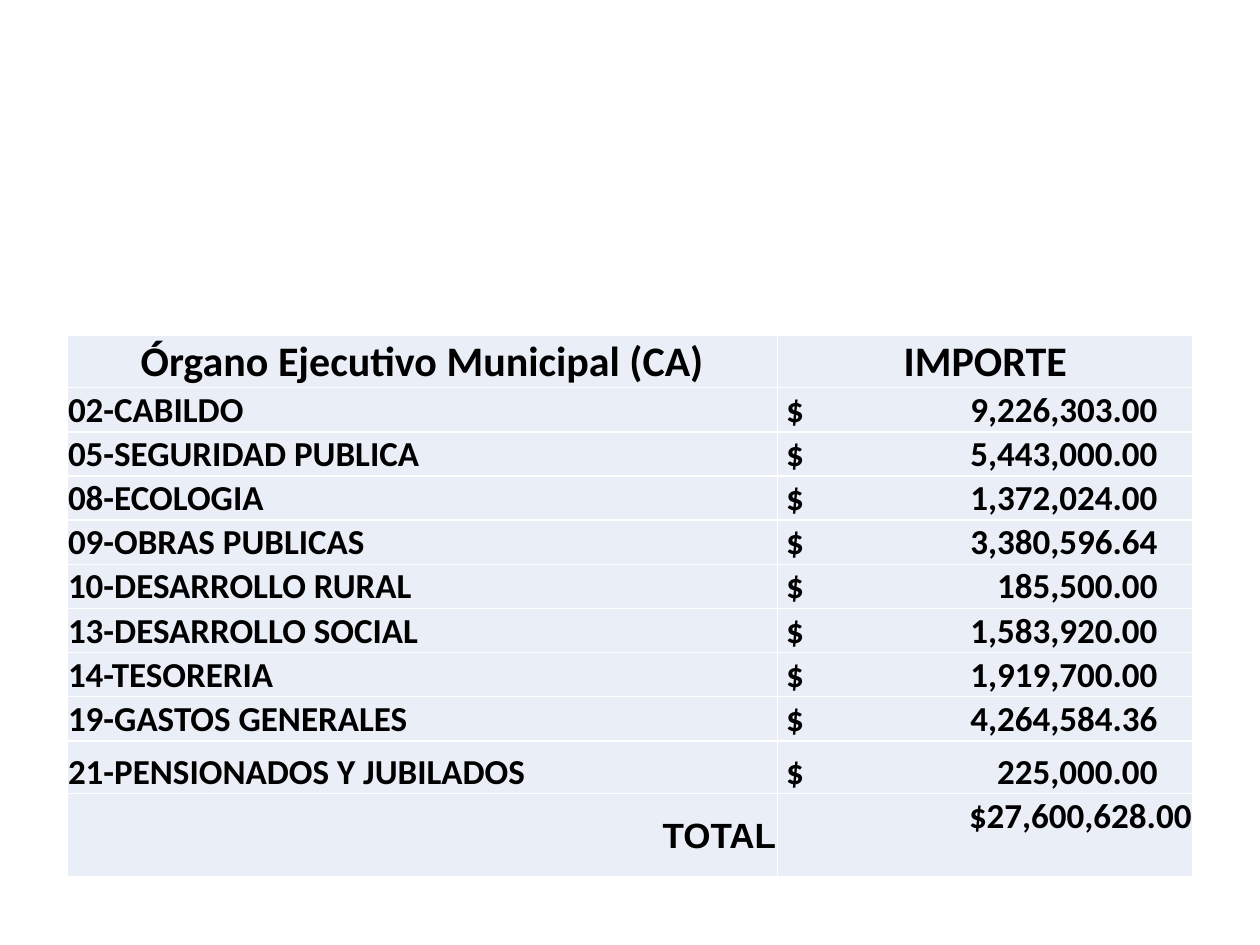
import pptx
import pptx.dml.color
import pptx.enum.text
import pptx.oxml.ns
import pptx.util
from lxml import etree
from pptx.util import Inches

BLACK = pptx.dml.color.RGBColor(0x00, 0x00, 0x00)
WHITE = pptx.dml.color.RGBColor(0xFF, 0xFF, 0xFF)
PALE_BLUE = pptx.dml.color.RGBColor(0xE9, 0xEE, 0xF7)

ALIGN = pptx.enum.text.PP_ALIGN
ANCHOR = pptx.enum.text.MSO_ANCHOR

HEADINGS = ("Órgano Ejecutivo Municipal (CA)", "IMPORTE")
BUDGET = [
    ("02-CABILDO", "9,226,303.00"),
    ("05-SEGURIDAD PUBLICA", "5,443,000.00"),
    ("08-ECOLOGIA", "1,372,024.00"),
    ("09-OBRAS PUBLICAS", "3,380,596.64"),
    ("10-DESARROLLO RURAL", "185,500.00"),
    ("13-DESARROLLO SOCIAL", "1,583,920.00"),
    ("14-TESORERIA", "1,919,700.00"),
    ("19-GASTOS GENERALES", "4,264,584.36"),
    ("21-PENSIONADOS Y JUBILADOS", "225,000.00"),
]
TOTAL = ("TOTAL", "$27,600,628.00")

COLUMN_WIDTHS = (5.64, 3.3)
ROW_HEIGHTS = [0.41] + [0.35] * 8 + [0.42, 0.66]
AMOUNT_INDENT = 0.07
AMOUNT_TAB = 2.95


def add_element(parent, tag, **attributes):
    element = etree.SubElement(parent, pptx.oxml.ns.qn(tag))
    for name, value in attributes.items():
        element.set(name, str(value))
    return element


def add_borders(cell):
    properties = cell._tc.get_or_add_tcPr()
    for side in ("a:lnL", "a:lnR", "a:lnT", "a:lnB"):
        line = add_element(properties, side, w=pptx.util.Pt(1))
        add_element(add_element(line, "a:solidFill"), "a:srgbClr", val=WHITE)


def add_right_tab(paragraph, position):
    tabs = add_element(paragraph._p.get_or_add_pPr(), "a:tabLst")
    add_element(tabs, "a:tab", pos=Inches(position), algn="r")


def fill_cell(cell, text, size=20, font="Calibri", align=ALIGN.LEFT,
              anchor=ANCHOR.BOTTOM, indent=0.01, tab=None):
    add_borders(cell)
    cell.fill.solid()
    cell.fill.fore_color.rgb = PALE_BLUE
    cell.margin_left = Inches(indent)
    cell.margin_right = cell.margin_top = Inches(0.01)
    cell.margin_bottom = 0
    cell.vertical_anchor = anchor
    cell.text = text
    paragraph = cell.text_frame.paragraphs[0]
    paragraph.alignment = align
    if tab is not None:
        add_right_tab(paragraph, tab)
    paragraph.font.name = font
    paragraph.font.size = pptx.util.Pt(size)
    paragraph.font.bold = True
    paragraph.font.color.rgb = BLACK


def add_budget_table(slide, left, top, width, height):
    table = slide.shapes.add_table(
        len(ROW_HEIGHTS), len(COLUMN_WIDTHS), left, top, width, height).table
    table.first_row = False
    table.horz_banding = False
    for column, column_width in zip(table.columns, COLUMN_WIDTHS):
        column.width = Inches(column_width)
    for row, row_height in zip(table.rows, ROW_HEIGHTS):
        row.height = Inches(row_height)

    for column, heading in enumerate(HEADINGS):
        fill_cell(table.cell(0, column), heading, size=24, align=ALIGN.CENTER)
    for row, (department, amount) in enumerate(BUDGET, start=1):
        fill_cell(table.cell(row, 0), department)
        fill_cell(table.cell(row, 1), f"$\t{amount}",
                  indent=AMOUNT_INDENT, tab=AMOUNT_TAB)
    label, amount = TOTAL
    last = len(ROW_HEIGHTS) - 1
    fill_cell(table.cell(last, 0), label, font="Arial",
              align=ALIGN.RIGHT, anchor=ANCHOR.MIDDLE)
    fill_cell(table.cell(last, 1), amount,
              align=ALIGN.RIGHT, anchor=ANCHOR.TOP)


def main():
    presentation = pptx.Presentation()
    presentation.slide_width = Inches(10)
    presentation.slide_height = Inches(7.5)
    slide = presentation.slides.add_slide(presentation.slide_layouts[6])
    add_budget_table(slide, Inches(0.53), Inches(2.66),
                     Inches(sum(COLUMN_WIDTHS)), Inches(sum(ROW_HEIGHTS)))
    presentation.save("out.pptx")


if __name__ == "__main__":
    main()
